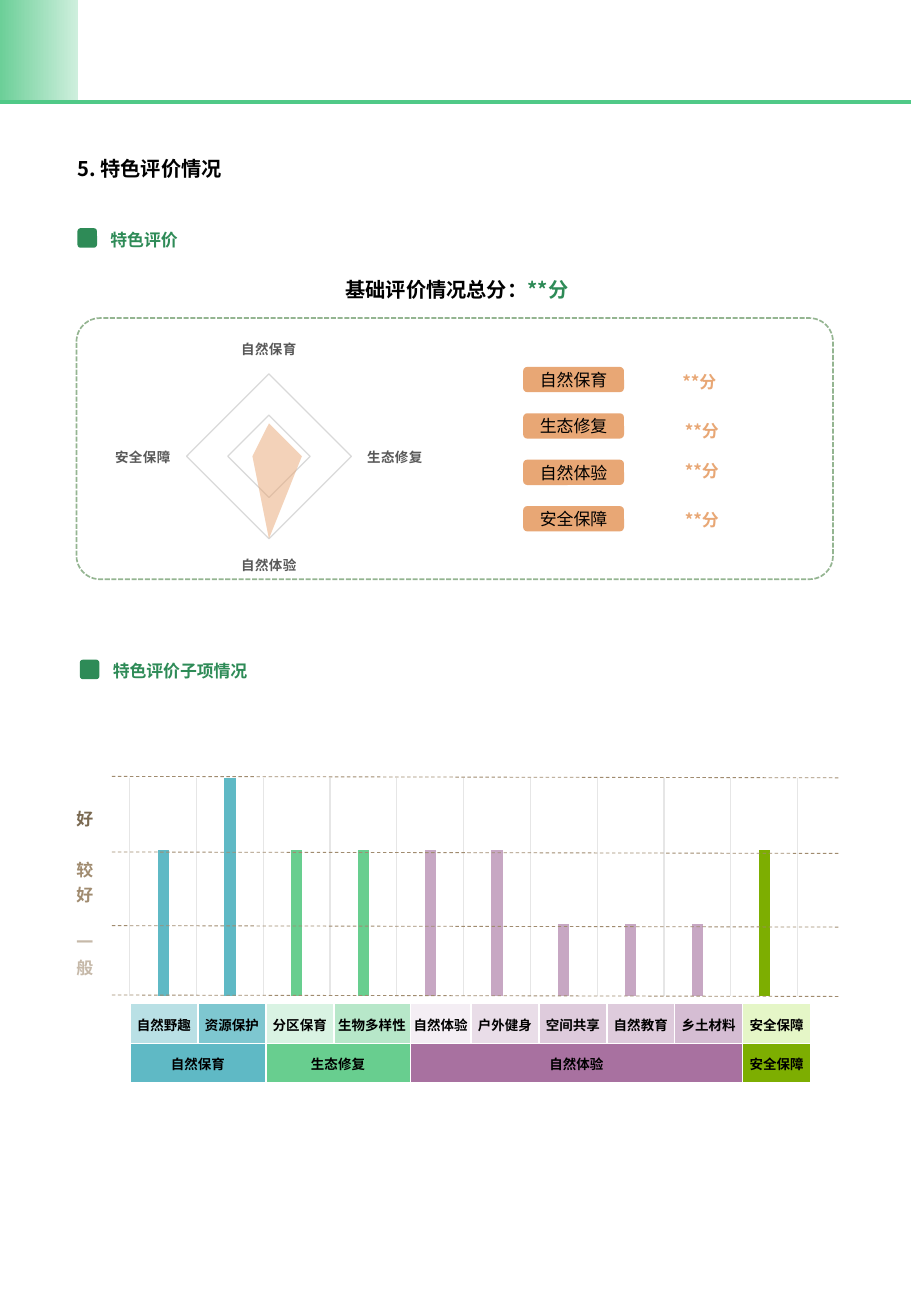
"""Builds the feature evaluation page with its radar, column chart and table."""
import lxml.etree
import pptx
import pptx.chart.data
import pptx.dml.color
import pptx.enum.chart
import pptx.enum.dml
import pptx.enum.shapes
import pptx.enum.text
import pptx.oxml.ns
import pptx.util

Cm, Pt = pptx.util.Cm, pptx.util.Pt
qn = pptx.oxml.ns.qn
SHAPE = pptx.enum.shapes.MSO_SHAPE
DASH = pptx.enum.dml.MSO_LINE
ALIGN = pptx.enum.text.PP_ALIGN
MIDDLE = pptx.enum.text.MSO_ANCHOR.MIDDLE
KIND = pptx.enum.chart.XL_CHART_TYPE
FONT = "Noto Sans CJK SC"

COLORS = {
    "black": "000000", "white": "FFFFFF", "rule": "50C987", "fade_from": "6CCF98",
    "fade_to": "CEEFDD", "heading": "2E8B57", "orange": "E8A775", "frame": "94B591",
    "good": "7A6951", "fair": "A08B6F", "plain": "C6B9A9", "label": "595959",
    "web": "D9D9D9", "grid": "E6E6E6", "blue": "5FB9C5", "green": "68CE8F",
    "mauve": "C7A7C3", "purple": "A871A0", "olive": "7DAE01",
    "blue1": "B9E0E5", "blue2": "7EC7D0", "green1": "D9F3E3", "green2": "B7E7C9",
    "mauve1": "F4EEF4", "mauve2": "E9DDE8", "mauve3": "DECBDC", "mauve4": "D5BDD3",
    "olive1": "E5F6C7",
}
TITLE = "5. 特色评价情况"
TOTAL = [("基础评价情况总分：", "black"), ("**分", "heading")]
SECTIONS = [("特色评价", 1.32, 4.57), ("特色评价子项情况", 1.37, 13.59)]
SCORES = [("自然保育", 40, 9.86, 7.65), ("生态修复", 40, 9.91, 8.66),
          ("自然体验", 100, 9.91, 9.5), ("安全保障", 20, 9.91, 10.52)]
LEVELS = [("好", "good", 16.79, 0.48), ("较好", "fair", 17.86, 1.02),
          ("一般", "plain", 19.38, 1.02)]
LEVEL_LINES = [16.23, 17.81, 19.35, 20.8]
ITEMS = [("自然野趣", 67, "blue", "blue1", 1.42), ("资源保护", 100, "blue", "blue2", 1.42),
         ("分区保育", 67, "green", "green1", 1.42), ("生物多样性", 67, "green", "green2", 1.6),
         ("自然体验", 67, "mauve", "mauve1", 1.27), ("户外健身", 67, "mauve", "mauve2", 1.42),
         ("空间共享", 33, "mauve", "mauve3", 1.42), ("自然教育", 33, "mauve", "mauve3", 1.42),
         ("乡土材料", 33, "mauve", "mauve4", 1.42), ("安全保障", 67, "olive", "olive1", 1.42)]
GROUPS = [("自然保育", "blue", 2), ("生态修复", "green", 2),
          ("自然体验", "purple", 5), ("安全保障", "olive", 1)]

NO_INSET = dict.fromkeys(["margin_left", "margin_top", "margin_right", "margin_bottom"], 0)
GROW = {"word_wrap": True, "auto_size": pptx.enum.text.MSO_AUTO_SIZE.SHAPE_TO_FIT_TEXT}
CENTERED = {"alignment": ALIGN.CENTER}
JUSTIFIED = {"alignment": ALIGN.JUSTIFY, "line_spacing": 1.25}

prs = pptx.Presentation()
prs.slide_width, prs.slide_height = Cm(19.05), Cm(27.51)
slide = prs.slides.add_slide(prs.slide_layouts[6])


def rgb(name):
    return pptx.dml.color.RGBColor.from_string(COLORS[name])


def apply(target, values):
    for key, value in values.items():
        setattr(target, key, value)


def paint(fill, color):
    fill.solid()
    fill.fore_color.rgb = rgb(color)


def stroke(line, color, width, dash=None):
    line.color.rgb = rgb(color)
    apply(line, {"width": Pt(width), "dash_style": dash})


def write(tf, runs, size, paragraph, frame, bold=True):
    apply(tf, frame)
    p = tf.paragraphs[0]
    apply(p, paragraph)
    for text, color in runs:
        r = p.add_run()
        r.text = text
        apply(r.font, {"name": FONT, "size": Pt(size), "bold": bold})
        r.font.color.rgb = rgb(color)
    return p


def box(kind, at, color=None):
    s = slide.shapes.add_shape(kind, *map(Cm, at))
    s.shadow.inherit = False
    s.line.fill.background()
    if color:
        paint(s.fill, color)
    else:
        s.fill.background()
    return s


def textbox(at, runs, size, paragraph, frame):
    return write(slide.shapes.add_textbox(*map(Cm, at)).text_frame,
                 runs, size, paragraph, frame)


def rule(start, end, color, width, dash=None):
    s = slide.shapes.add_connector(pptx.enum.shapes.MSO_CONNECTOR.STRAIGHT,
                                   *map(Cm, start + end))
    stroke(s.line, color, width, dash)
    lxml.etree.SubElement(s._element.spPr, qn("a:effectLst"))


def add_chart(kind, at, categories, values, size, font):
    data = pptx.chart.data.CategoryChartData()
    data.categories = categories
    data.add_series("Series 1", values)
    chart = slide.shapes.add_chart(kind, *map(Cm, at), data).chart
    apply(chart, {"has_title": False, "has_legend": False})
    apply(chart.font, {"name": font, "size": Pt(size)})
    apply(chart.plots[0], {"vary_by_categories": False})
    apply(chart.value_axis, {"visible": False, "minimum_scale": 0, "maximum_scale": 100})
    return chart


def fill_cell(cell, text, color):
    tc_pr = cell._tc.get_or_add_tcPr()
    for side in ("a:lnL", "a:lnR", "a:lnT", "a:lnB"):
        ln = lxml.etree.SubElement(tc_pr, qn(side), w=str(Pt(1)))
        solid = lxml.etree.SubElement(ln, qn("a:solidFill"))
        lxml.etree.SubElement(solid, qn("a:srgbClr"), val=COLORS["white"])
    paint(cell.fill, color)
    inset = dict.fromkeys(["margin_left", "margin_top", "margin_right"], Cm(0.03))
    apply(cell, {**inset, "margin_bottom": 0, "vertical_anchor": MIDDLE})
    write(cell.text_frame, [(text, "black")], 8, CENTERED, {})


def set_east_asian(root):
    for latin in list(root.iter(qn("a:latin"))):
        latin.addnext(lxml.etree.Element(qn("a:ea"), typeface=latin.get("typeface")))


def draw_columns():
    numbers = [str(i + 1) for i in range(len(ITEMS))]
    chart = add_chart(KIND.COLUMN_CLUSTERED, (1.98, 16.08, 14.71, 5.94), numbers,
                      [item[1] for item in ITEMS], 10, "Arial")
    apply(chart.plots[0], {"gap_width": 500, "overlap": 2})
    chart.value_axis.has_major_gridlines = False
    chart.category_axis.visible = False
    stroke(chart.category_axis.major_gridlines.format.line, "grid", 0.75)
    for i, item in enumerate(ITEMS):
        paint(chart.plots[0].series[0].points[i].format.fill, item[2])
    area = chart._chartSpace.find(".//" + qn("c:plotArea"))
    for old in area.findall(qn("c:layout")):
        area.remove(old)
    layout = lxml.etree.Element(qn("c:layout"))
    manual = lxml.etree.SubElement(layout, qn("c:manualLayout"))
    for tag, value in [("layoutTarget", "inner"), ("xMode", "edge"), ("yMode", "edge"),
                       ("x", "0.05"), ("y", "0.03"), ("w", "0.95"), ("h", "0.77")]:
        lxml.etree.SubElement(manual, qn("c:" + tag), val=value)
    area.insert(0, layout)


def draw_radar():
    chart = add_chart(KIND.RADAR_FILLED, (1.47, 6.96, 8.31, 5.16),
                      [row[0] for row in SCORES], [row[1] for row in SCORES], 8, FONT)
    chart.value_axis.major_unit = 50
    stroke(chart.value_axis.major_gridlines.format.line, "web", 0.75)
    axis = chart.category_axis
    apply(axis, {"has_major_gridlines": False,
                 "major_tick_mark": pptx.enum.chart.XL_TICK_MARK.NONE})
    stroke(axis.format.line, "web", 0.75)
    apply(axis.tick_labels.font, {"name": FONT, "size": Pt(8), "bold": True})
    axis.tick_labels.font.color.rgb = rgb("label")
    series = chart.plots[0].series[0]
    paint(series.format.fill, "orange")
    lxml.etree.SubElement(series._element.find(".//" + qn("a:srgbClr")),
                          qn("a:alpha"), val="50000")
    set_east_asian(chart._chartSpace)


def draw_table():
    widths = [Cm(item[4]) for item in ITEMS]
    table = slide.shapes.add_table(2, len(ITEMS), Cm(2.72), Cm(20.98),
                                   sum(widths), Cm(1.66)).table
    apply(table, {"first_row": False, "horz_banding": False})
    for i, (text, _, _, color, _) in enumerate(ITEMS):
        table.columns[i].width = widths[i]
        fill_cell(table.cell(0, i), text, color)
    start = 0
    for text, color, span in GROUPS:
        if span > 1:
            table.cell(1, start).merge(table.cell(1, start + span - 1))
        fill_cell(table.cell(1, start), text, color)
        start += span


def main():
    fade = box(SHAPE.RECTANGLE, (0, 0, 1.63, 2.13)).fill
    fade.gradient()
    fade.gradient_angle = 0
    for stop, color in zip(fade.gradient_stops, ("fade_from", "fade_to")):
        stop.color.rgb = rgb(color)
    rule((0, 2.13), (19.05, 2.13), "rule", 2.5)
    draw_columns()
    draw_radar()
    write(box(SHAPE.ROUNDED_RECTANGLE, (1.6, 3.28, 7.21, 0.36)).text_frame, [(TITLE, "black")],
          12, {"alignment": ALIGN.LEFT, "line_spacing": 1.25},
          {**NO_INSET, "vertical_anchor": MIDDLE})
    for text, x, y in SECTIONS:
        p = textbox((x, y, 4.5, 0.74), [(text, "heading")], 10, JUSTIFIED, GROW)
        p._p.get_or_add_pPr().set("indent", str(Cm(0.74)))
        box(SHAPE.ROUNDED_RECTANGLE, (x + 0.3, y + 0.2, 0.41, 0.41), "heading")
    textbox((6.1, 5.66, 6.91, 0.79), TOTAL, 12, CENTERED,
            {"word_wrap": True, "vertical_anchor": MIDDLE})
    frame = box(SHAPE.ROUNDED_RECTANGLE, (1.6, 6.65, 15.82, 5.46))
    frame.adjustments[0] = 0.09
    stroke(frame.line, "frame", 1, DASH.SQUARE_DOT)
    for i, (text, _, x, y) in enumerate(SCORES):
        pill = box(SHAPE.ROUNDED_RECTANGLE, (10.94, 7.67 + 0.97 * i, 2.11, 0.53), "orange")
        write(pill.text_frame, [(text, "black")], 10, CENTERED,
              {"vertical_anchor": MIDDLE}, bold=False)
        textbox((x, y, 9.53, 0.69), [("**分", "orange")], 10, CENTERED, GROW)
    for text, color, y, height in LEVELS:
        textbox((1.6, y, 0.41, height), [(text, color)], 10, JUSTIFIED, {**NO_INSET, **GROW})
    for y in LEVEL_LINES:
        rule((2.34, y), (17.58, y + 0.03), "fair", 0.5, DASH.DASH)
    draw_table()
    set_east_asian(slide._element)
    prs.save("out.pptx")


if __name__ == "__main__":
    main()
